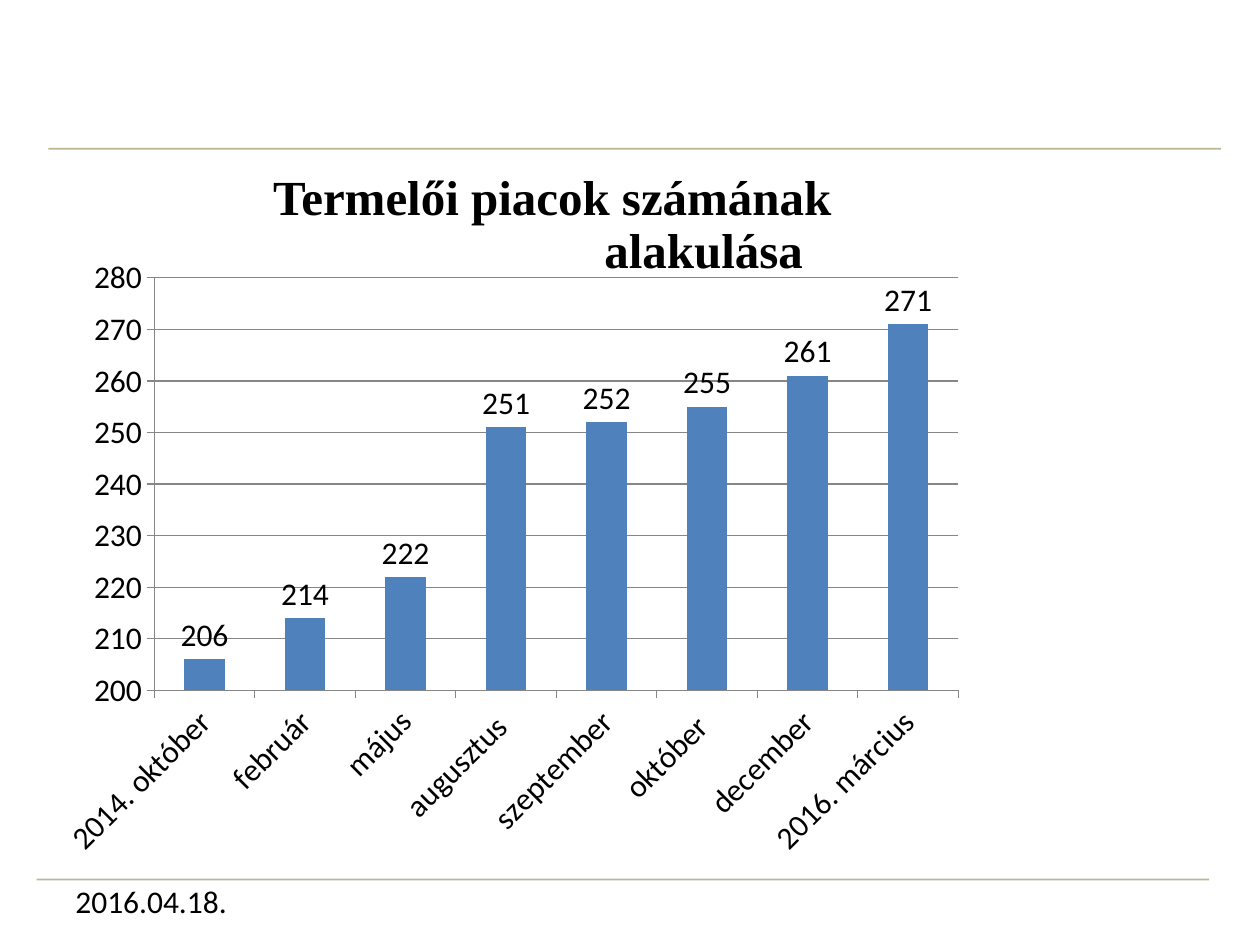
from dataclasses import dataclass

from lxml import etree
from pptx import Presentation
from pptx.chart.data import CategoryChartData
from pptx.dml.color import RGBColor
from pptx.enum.chart import XL_CHART_TYPE, XL_LABEL_POSITION, XL_TICK_MARK
from pptx.enum.shapes import MSO_CONNECTOR
from pptx.enum.text import MSO_ANCHOR, PP_ALIGN
from pptx.oxml import parse_xml
from pptx.oxml.ns import nsdecls, qn
from pptx.util import Pt

CLUSTERED = XL_CHART_TYPE.COLUMN_CLUSTERED
OUTSIDE_END = XL_LABEL_POSITION.OUTSIDE_END
TICK_OUT = XL_TICK_MARK.OUTSIDE
STRAIGHT = MSO_CONNECTOR.STRAIGHT
TOP, MIDDLE = MSO_ANCHOR.TOP, MSO_ANCHOR.MIDDLE
LEFT, CENTER = PP_ALIGN.LEFT, PP_ALIGN.CENTER


@dataclass(frozen=True)
class Theme:
    text: RGBColor = RGBColor(0x00, 0x00, 0x00)
    column: RGBColor = RGBColor(0x4F, 0x81, 0xBD)
    axis: RGBColor = RGBColor(0x86, 0x86, 0x86)
    rule: RGBColor = RGBColor(0x94, 0x8A, 0x54)
    rule_opacity: int = 61
    title_font: str = "Times New Roman"
    body_font: str = "Calibri"
    title_size: int = 28
    body_size: int = 18


THEME = Theme()

MARKETS = {
    "2014. október": 206,
    "február": 214,
    "május": 222,
    "augusztus ": 251,
    "szeptember": 252,
    "október ": 255,
    "december": 261,
    "2016. március": 271,
}


def style_font(font, name=THEME.body_font, size=THEME.body_size, bold=False):
    font.name = name
    font.size = Pt(size)
    font.bold = bold
    font.color.rgb = THEME.text


def write_text(shape, lines, align=LEFT, anchor=TOP, inset=0, indents=(),
               line_spacing=1.0, **font_format):
    """Fill a shape with one paragraph per line; indents are left margins."""
    frame = shape.text_frame
    frame.word_wrap = True
    frame.vertical_anchor = anchor
    frame.margin_left = frame.margin_right = Pt(inset)
    frame.margin_top = frame.margin_bottom = 0
    frame.text = "\n".join(lines)
    for paragraph in frame.paragraphs:
        paragraph.alignment = align
        paragraph.line_spacing = line_spacing
        paragraph.space_before = paragraph.space_after = Pt(0)
        style_font(paragraph.runs[0].font, **font_format)
    for paragraph, indent in zip(frame.paragraphs, indents):
        properties = paragraph._p.get_or_add_pPr()
        properties.set("marL", str(Pt(indent)))
        properties.set("indent", "0")


def add_rule(slide, left, top, width):
    line = slide.shapes.add_connector(
        STRAIGHT, Pt(left), Pt(top), Pt(left + width), Pt(top))
    line.line.width = Pt(1)
    line.line.color.rgb = THEME.rule
    properties = line._element.spPr
    color = properties.find(".//" + qn("a:srgbClr"))
    etree.SubElement(color, qn("a:alpha"), val=str(THEME.rule_opacity * 1000))
    etree.SubElement(properties, qn("a:effectLst"))


def place_plot(frame, left, top, width, height):
    """Fix the inner plot area, in points from the chart's corner."""
    plot_area = frame.chart._chartSpace.chart.plotArea
    for layout in plot_area.findall(qn("c:layout")):
        plot_area.remove(layout)
    plot_area.insert(0, parse_xml(
        f'<c:layout {nsdecls("c")}><c:manualLayout>'
        '<c:layoutTarget val="inner"/>'
        '<c:xMode val="edge"/><c:yMode val="edge"/>'
        f'<c:x val="{Pt(left) / frame.width}"/>'
        f'<c:y val="{Pt(top) / frame.height}"/>'
        f'<c:w val="{Pt(width) / frame.width}"/>'
        f'<c:h val="{Pt(height) / frame.height}"/>'
        '</c:manualLayout></c:layout>'))


def style_axis(axis):
    axis.major_tick_mark = TICK_OUT
    axis.format.line.color.rgb = THEME.axis
    axis.format.line.width = Pt(0.75)
    style_font(axis.tick_labels.font)


def add_market_chart(slide, left, top, width, height):
    data = CategoryChartData()
    data.categories = MARKETS.keys()
    data.add_series("Series 1", MARKETS.values())
    frame = slide.shapes.add_chart(
        CLUSTERED, Pt(left), Pt(top), Pt(width), Pt(height), data)
    chart = frame.chart
    chart.has_title = False
    chart.has_legend = False
    style_font(chart.font)

    months, counts = chart.category_axis, chart.value_axis
    style_axis(months)
    style_axis(counts)
    months._element.find(qn("c:txPr")).find(qn("a:bodyPr")).set("rot", "-2700000")
    counts.minimum_scale, counts.maximum_scale = 200, 280
    counts.major_unit = 10
    counts.major_gridlines.format.line.color.rgb = THEME.axis
    counts.major_gridlines.format.line.width = Pt(0.75)

    plot = chart.plots[0]
    plot.gap_width = 150
    plot.vary_by_categories = False
    plot.has_data_labels = True
    plot.data_labels.show_value = True
    plot.data_labels.position = OUTSIDE_END
    style_font(plot.data_labels.font)
    fill = plot.series[0].format.fill
    fill.solid()
    fill.fore_color.rgb = THEME.column
    place_plot(frame, 63, 64.4, 459.5, 235.9)


def set_title(slide, left, top, width, height, lines, **text_format):
    """Place the title placeholder in front of the chart."""
    title = slide.shapes.title
    title.left, title.top = Pt(left), Pt(top)
    title.width, title.height = Pt(width), Pt(height)
    write_text(title, lines, **text_format)
    slide.shapes._spTree.append(title._element)


def add_date(slide, left, top, width, height, date):
    box = slide.shapes.add_textbox(Pt(left), Pt(top), Pt(width), Pt(height))
    write_text(box, [date], anchor=MIDDLE, inset=7.2)


def main():
    presentation = Presentation()
    presentation.slide_width, presentation.slide_height = Pt(720), Pt(540)
    slide = presentation.slides.add_slide(presentation.slide_layouts[5])

    add_rule(slide, 27.6, 85, 670)
    add_rule(slide, 21, 502.6, 670)
    add_date(slide, 36, 500.4, 168, 28.8, "2016.04.18.")
    add_market_chart(slide, 25.2, 94.3, 668.9, 402.5)
    set_title(slide, 95.6, 98.5, 440, 64, ["Termelői piacok számának", "alakulása"],
              align=CENTER, indents=(0, 173), line_spacing=0.91,
              name=THEME.title_font, size=THEME.title_size, bold=True)

    presentation.save("out.pptx")


if __name__ == "__main__":
    main()
